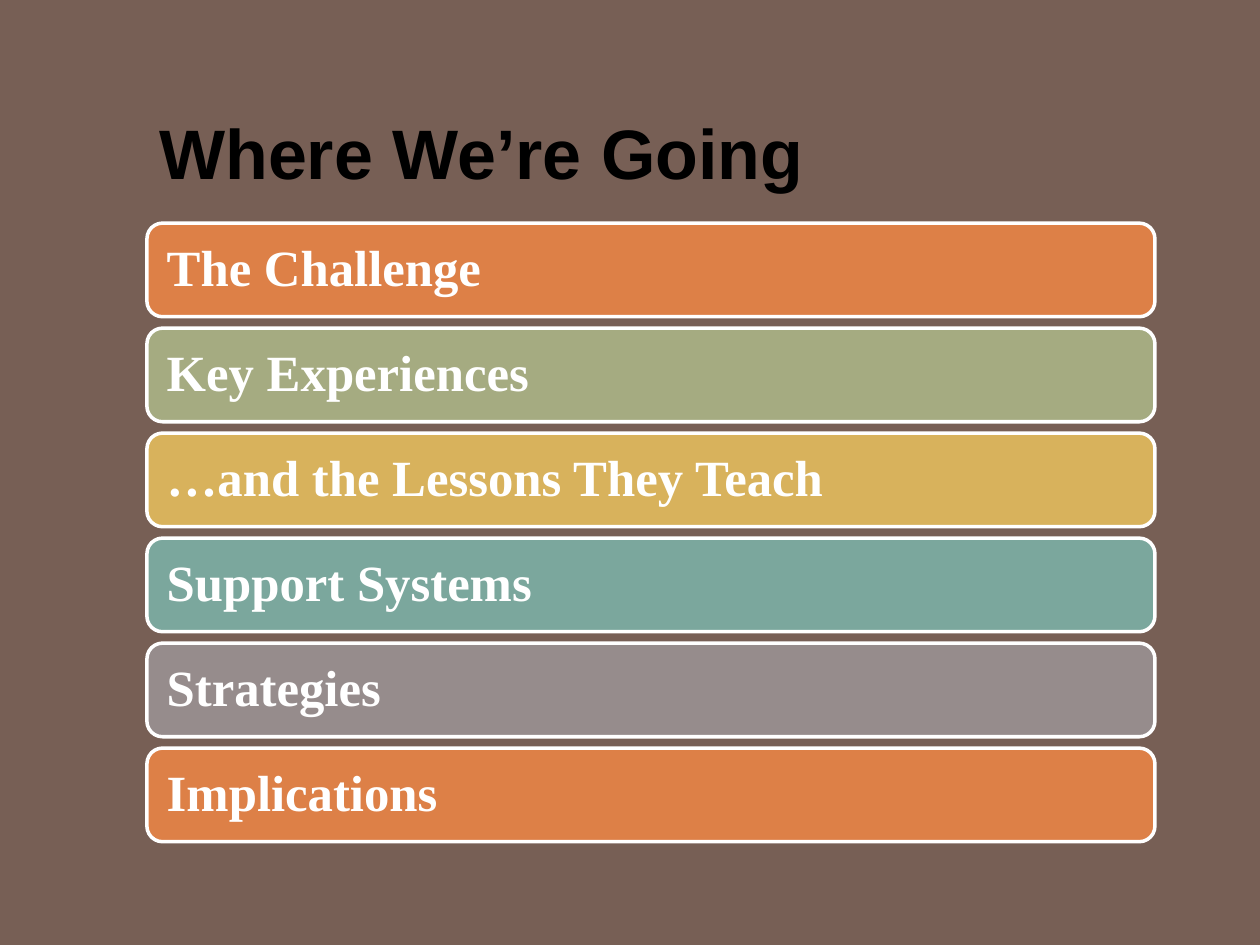
"""Build the "Where We're Going" agenda slide with six coloured bars."""
from pptx import Presentation
from pptx import util as u
from pptx.dml.color import RGBColor
from pptx.enum import shapes, text


def rgb(value):
    return RGBColor.from_string(value)


def write(tf, content, font, size, color, spacing):
    tf.word_wrap = True
    p = tf.paragraphs[0]
    p.alignment = text.PP_ALIGN.LEFT
    p.line_spacing = spacing
    r = p.add_run()
    r.text = content
    r.font.name = font
    r.font.size = u.Pt(size)
    r.font.bold = True
    r.font.color.rgb = rgb(color)


prs = Presentation()
prs.slide_width, prs.slide_height = u.Pt(720), u.Pt(540)
s = prs.slides.add_slide(prs.slide_layouts[6])
s.background.fill.solid()
s.background.fill.fore_color.rgb = rgb("775F55")

left, top, width, height, pitch = 84, 127.5, 576, 53.5, 60

title = s.shapes.add_textbox(u.Pt(left), u.Pt(21.6), u.Pt(618), u.Pt(92.2))
title.text_frame.vertical_anchor = text.MSO_ANCHOR.BOTTOM
write(title.text_frame, "Where We’re Going", "Arial", 40, "000000", 0.8)

topics = [
    ("The Challenge", "DD8047"),
    ("Key Experiences", "A5AB81"),
    ("…and the Lessons They Teach", "D8B25C"),
    ("Support Systems", "7BA79D"),
    ("Strategies", "968C8C"),
    ("Implications", "DD8047"),
]
for i, (topic, color) in enumerate(topics):
    sp = s.shapes.add_shape(
        shapes.MSO_SHAPE.ROUNDED_RECTANGLE,
        u.Pt(left), u.Pt(top + i * pitch), u.Pt(width), u.Pt(height))
    sp.shadow.inherit = False
    sp.fill.solid()
    sp.fill.fore_color.rgb = rgb(color)
    sp.line.color.rgb = rgb("FFFFFF")
    sp.line.width = u.Pt(2)
    tf = sp.text_frame
    tf.vertical_anchor = text.MSO_ANCHOR.MIDDLE
    tf.margin_left = tf.margin_right = u.Pt(8.7)
    tf.margin_top = tf.margin_bottom = u.Pt(8.7)
    write(tf, topic, "Times New Roman", 29, "FFFFFF", 0.9)

prs.save("out.pptx")
